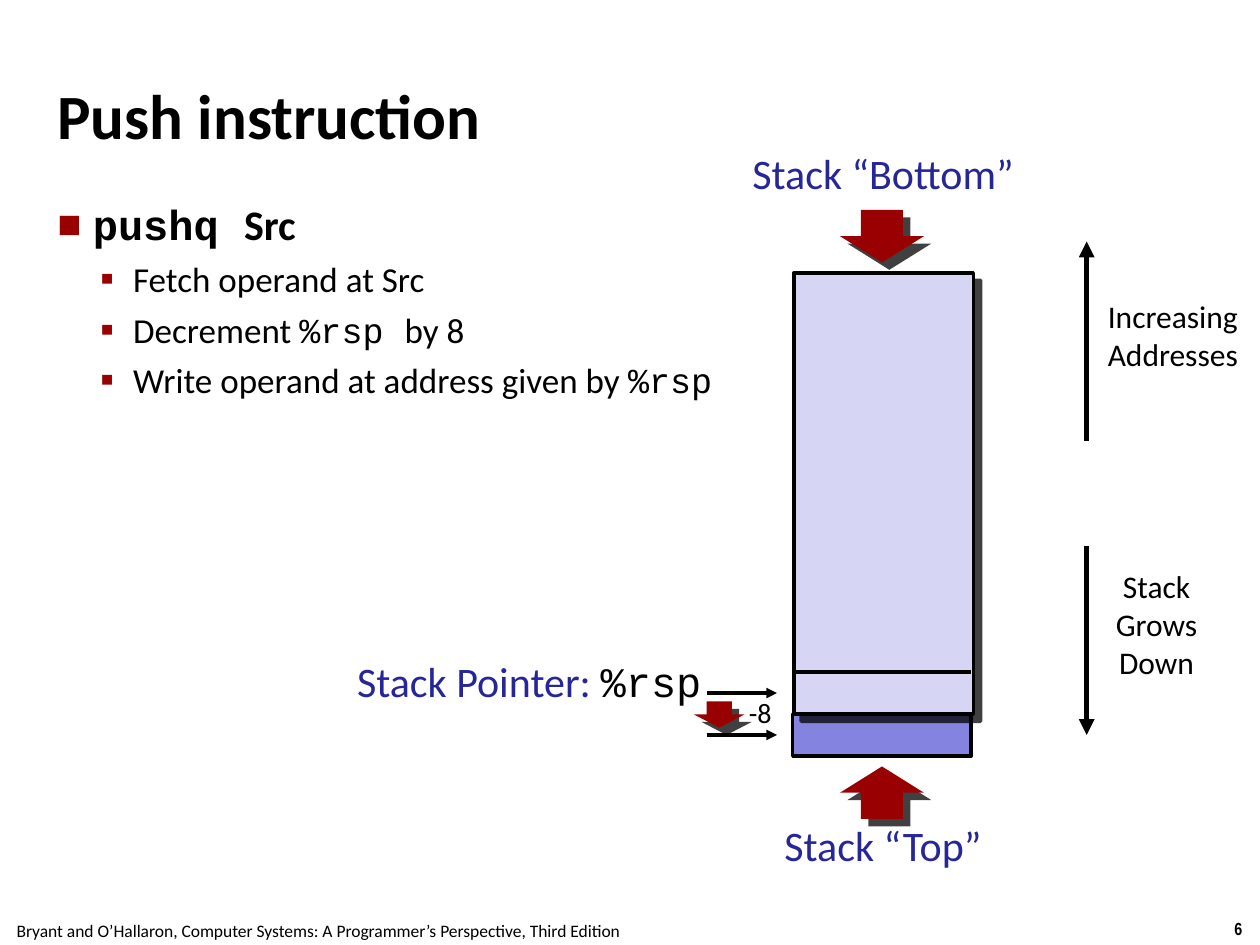
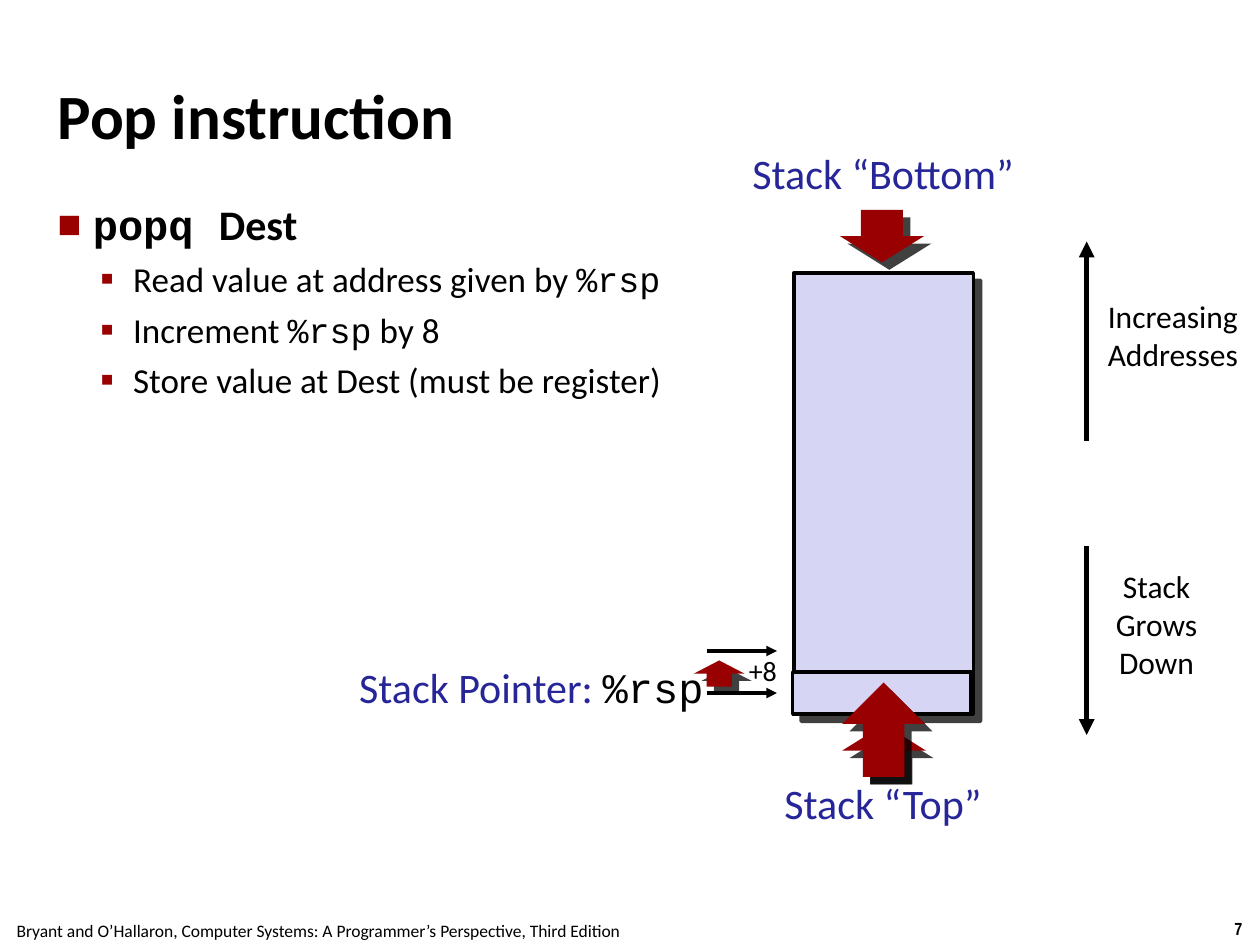
"""Build two slides on the push and pop stack instructions."""
from lxml import etree
from pptx import Presentation
from pptx.dml.color import RGBColor
from pptx.enum.shapes import MSO_CONNECTOR, MSO_SHAPE
from pptx.enum.text import MSO_ANCHOR, MSO_AUTO_SIZE, PP_ALIGN
from pptx.oxml.ns import qn
from pptx.util import Inches, Pt

LEFT, CENTER, RIGHT = PP_ALIGN.LEFT, PP_ALIGN.CENTER, PP_ALIGN.RIGHT
TOP, MIDDLE = MSO_ANCHOR.TOP, MSO_ANCHOR.MIDDLE
FIXED = MSO_AUTO_SIZE.NONE
RECT, DOWN, UP = MSO_SHAPE.RECTANGLE, MSO_SHAPE.DOWN_ARROW, MSO_SHAPE.UP_ARROW
STRAIGHT = MSO_CONNECTOR.STRAIGHT

BLACK, WHITE, NAVY = "000000", "FFFFFF", "262699"
ARROW_RED, BULLET_RED = "980002", "990000"
LAVENDER, VIOLET = "D6D6F4", "8484E0"
SANS, MONO, NARROW = "Calibri", "Courier New", "Arial Narrow"
FOOTER = ("Bryant and O’Hallaron, Computer Systems: "
          "A Programmer’s Perspective, Third Edition")

COLUMNS, ROWS = 120, 90
CELL = Inches(10) // COLUMNS


def write(frame, text, size=18, font=SANS, hue=BLACK, bold=False, align=CENTER,
          margin=0.0, wrap=False, anchor=TOP):
    """Fill a text frame; lines become paragraphs and `code` is monospaced."""
    frame.word_wrap, frame.auto_size, frame.vertical_anchor = wrap, FIXED, anchor
    frame.margin_left = frame.margin_right = Inches(margin)
    frame.margin_top = frame.margin_bottom = Inches(margin)
    for number, line in enumerate(text.split("\n")):
        paragraph = frame.add_paragraph() if number else frame.paragraphs[0]
        paragraph.alignment = align
        for position, part in enumerate(line.split("`")):
            if part:
                code = position % 2
                run = paragraph.add_run()
                run.text = part
                run.font.size, run.font.bold = Pt(size), bold
                run.font.name = MONO if code else font
                run.font.color.rgb = RGBColor.from_string(BLACK if code else hue)


def paint(item, fill=None, line=None, width=2, shadow=False, arrow=False):
    """Set the fill, outline, arrowhead and hard shadow of a shape or connector."""
    if fill:
        item.fill.solid()
        item.fill.fore_color.rgb = RGBColor.from_string(fill)
    if line:
        item.line.color.rgb = RGBColor.from_string(line)
        item.line.width = Pt(width)
    else:
        item.line.fill.background()
    properties = item._element.spPr
    if arrow:
        etree.SubElement(properties.find(qn("a:ln")), qn("a:tailEnd"), type="triangle")
    effects = etree.SubElement(properties, qn("a:effectLst"))
    if shadow:
        cast = etree.SubElement(effects, qn("a:outerShdw"), blurRad="0",
                                dist=str(Pt(6)), dir="2700000", algn="ctr", rotWithShape="0")
        tone = etree.SubElement(cast, qn("a:srgbClr"), val=BLACK)
        etree.SubElement(tone, qn("a:alpha"), val="75000")


stack = (RECT, (75.6, 26, 17.1, 42), LAVENDER, BLACK, True)
bottom_arrow = (DOWN, (80, 20, 8, 5), ARROW_RED, None, True)

instructions = [
    dict(
        number="6", title="Push instruction",
        steps="`pushq `Src\nFetch operand at Src\nDecrement `%rsp `by 8\n"
              "Write operand at address given by `%rsp`",
        blocks=[
            (RECT, (75.5, 68, 17, 4), VIOLET, BLACK, False),
            (DOWN, (66.1, 66.8, 4.8, 2.5), ARROW_RED, None, True),
            stack,
            bottom_arrow,
            (UP, (80, 73, 8, 5), ARROW_RED, None, True),
        ],
        moved_row=70, change="-8", change_box=(70.8, 65.8, 3.2, 4.2),
        pointer_at=(33.4, 62.4), top_row=78),
    dict(
        number="7", title="Pop instruction",
        steps="`popq `Dest\nRead value at address given by `%rsp`\n"
              "Increment `%rsp` by 8\nStore value at Dest (must be register)",
        blocks=[
            (UP, (80.2, 69, 8, 5), ARROW_RED, None, True),
            stack,
            bottom_arrow,
            (UP, (66.1, 62.9, 4.8, 2.5), ARROW_RED, None, True),
            (RECT, (75.5, 64, 17, 4), LAVENDER, BLACK, False),
            (UP, (80.2, 65, 7.9, 9), ARROW_RED, None, True),
        ],
        moved_row=62, change="+8", change_box=(70.8, 61.8, 3.7, 4.2),
        pointer_at=(33.6, 63), top_row=74),
]

deck = Presentation()
deck.slide_width, deck.slide_height = COLUMNS * CELL, ROWS * CELL

for instruction in instructions:
    slide = deck.slides.add_slide(deck.slide_layouts[1])
    title, steps = slide.placeholders
    for holder, top, height in ((title, 3.4, 15), (steps, 18.4, 71.2)):
        holder.left, holder.top, holder.width, holder.height = (
            round(n * CELL) for n in (5, top, 110, height))
    write(title.text_frame, instruction["title"], size=36, bold=True, align=LEFT,
          margin=0.04, wrap=True, anchor=MIDDLE)
    write(steps.text_frame, instruction["steps"], size=20, align=LEFT,
          margin=0.04, wrap=True)

    for place, step in enumerate(steps.text_frame.paragraphs):
        step.level = 1 if place else 0
        step.space_before = Pt(5 if place else 6)
        if place == 0:
            for run in step.runs:
                run.font.size, run.font.bold = Pt(24), True
        mark, share, margin, indent = (
            ("▪", "110000", 0.6, -0.26) if place else ("■", "60000", 0.28, -0.28))
        layout = step._p.get_or_add_pPr()
        layout.set("marL", str(Inches(margin)))
        layout.set("indent", str(Inches(indent)))
        bullet_colour = etree.SubElement(layout, qn("a:buClr"))
        etree.SubElement(bullet_colour, qn("a:srgbClr"), val=BULLET_RED)
        etree.SubElement(layout, qn("a:buSzPct"), val=share)
        etree.SubElement(layout, qn("a:buFont"), typeface=SANS)
        etree.SubElement(layout, qn("a:buChar"), char=mark)

    for preset, box, fill, line, shadow in instruction["blocks"]:
        block = slide.shapes.add_shape(preset, *(round(n * CELL) for n in box))
        paint(block, fill, line, shadow=shadow)

    moved_row = instruction["moved_row"]
    for ends, width, arrow in (
            ((67.3, 66, 74, 66), 2, True),
            ((67.3, moved_row, 74, moved_row), 2, True),
            ((75.5, 64, 92.5, 64), 2, False),
            ((103.5, 52, 103.5, 70), 3, True),
            ((103.5, 42, 103.5, 23), 3, True)):
        line = slide.shapes.add_connector(STRAIGHT, *(round(n * CELL) for n in ends))
        paint(line, line=BLACK, width=width, arrow=arrow)

    for text, box, look in (
            ("Stack Grows\nDown", (104.8, 54, 10.7, 12), dict(wrap=True)),
            ("Increasing\nAddresses", (104.9, 28.3, 13.6, 8.3), {}),
            ("Stack “Bottom”", (70.7, 14, 26.8, 5.9), dict(size=24, hue=NAVY)),
            ("Stack “Top”", (73.9, instruction["top_row"], 20.4, 5.9),
             dict(size=24, hue=NAVY)),
            ("Stack Pointer: `%rsp`", (*instruction["pointer_at"], 33.4, 4.8),
             dict(size=24, hue=NAVY, align=RIGHT)),
            (instruction["change"], instruction["change_box"],
             dict(size=16, margin=0.04)),
            (FOOTER, (-0.2, 87, 61, 3.2), dict(size=10, margin=0.05)),
            (instruction["number"], (115.9, 86.8, 4.1, 3.2),
             dict(size=10, font=NARROW, bold=True, margin=0.05))):
        label = slide.shapes.add_textbox(*(round(n * CELL) for n in box))
        write(label.text_frame, text, **look)
        if "\n" in text:
            paint(label, WHITE)

deck.save("out.pptx")
